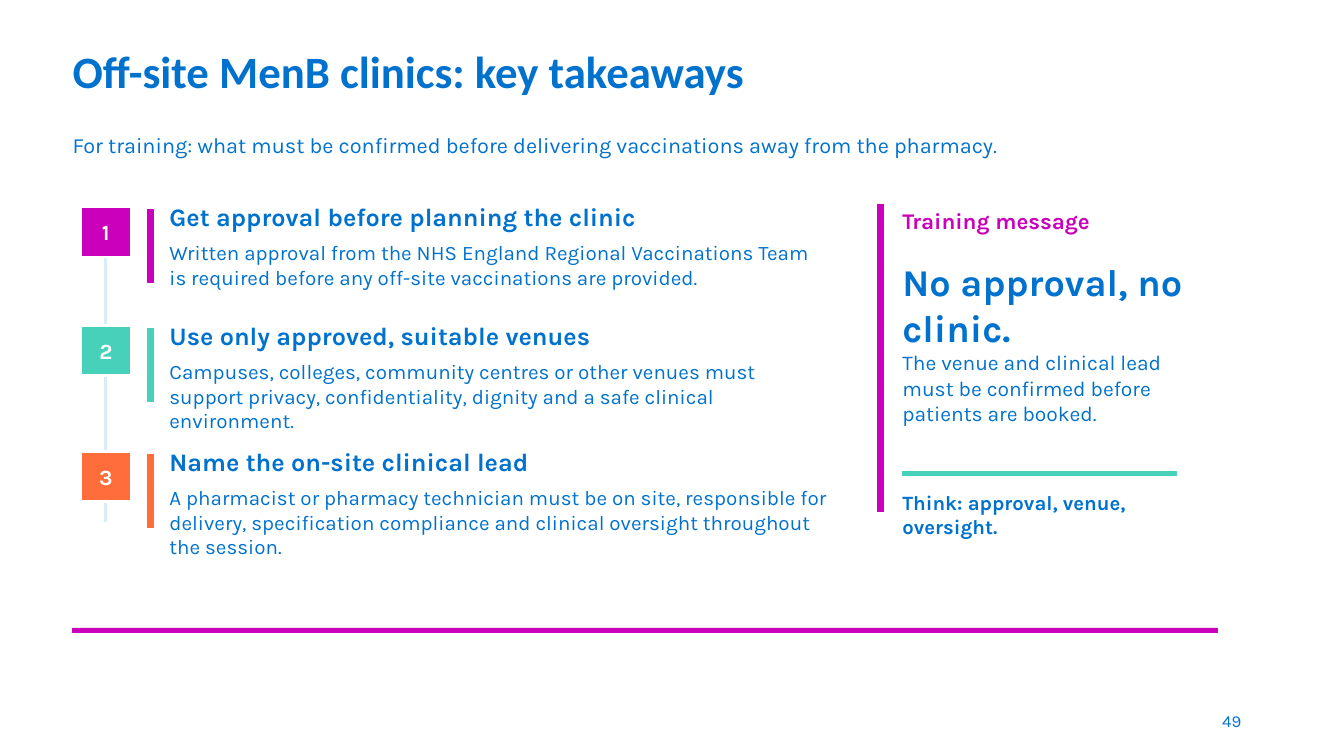
"""Build the slide of key takeaways for off-site MenB clinics."""
from dataclasses import dataclass

import pptx
import pptx.dml.color
import pptx.enum.shapes
import pptx.enum.text
import pptx.oxml
import pptx.oxml.ns
import pptx.shapes.autoshape
import pptx.slide
import pptx.util
from pptx.dml.color import RGBColor
from pptx.util import Inches

BLUE = RGBColor(0x00, 0x72, 0xCE)
MAGENTA = RGBColor(0xCB, 0x00, 0xBA)
TEAL = RGBColor(0x48, 0xD1, 0xBA)
ORANGE = RGBColor(0xFF, 0x6D, 0x3A)
PALE_BLUE = RGBColor(0xD9, 0xEC, 0xFA)
WHITE = RGBColor(0xFF, 0xFF, 0xFF)

ALIGN = pptx.enum.text.PP_ALIGN
ANCHOR = pptx.enum.text.MSO_ANCHOR
FIT = pptx.enum.text.MSO_AUTO_SIZE.SHAPE_TO_FIT_TEXT


@dataclass(frozen=True)
class Box:
    left: float
    top: float
    width: float
    height: float

    def lengths(self) -> tuple[int, ...]:
        return tuple(Inches(n) for n in (self.left, self.top, self.width, self.height))


@dataclass(frozen=True)
class Line:
    text: str
    size: float
    color: RGBColor = BLUE
    bold: bool = False
    font: str = "Karla"


@dataclass(frozen=True)
class Takeaway:
    top: float
    color: RGBColor
    heading: str
    detail: str


@dataclass(frozen=True)
class Note:
    box: Box
    lines: tuple[Line, ...]


TAKEAWAYS = (
    Takeaway(2.0, MAGENTA, "Get approval before planning the clinic",
             "Written approval from the NHS England Regional Vaccinations Team "
             "is required before any off-site vaccinations are provided."),
    Takeaway(3.18, TEAL, "Use only approved, suitable venues",
             "Campuses, colleges, community centres or other venues must support "
             "privacy, confidentiality, dignity and a safe clinical environment."),
    Takeaway(4.43, ORANGE, "Name the on-site clinical lead",
             "A pharmacist or pharmacy technician must be on site, responsible for "
             "delivery, specification compliance and clinical oversight throughout "
             "the session."),
)

NOTES = (
    Note(Box(0.72, 1.31, 10.9, 0.42),
         (Line("For training: what must be confirmed before delivering "
               "vaccinations away from the pharmacy.", 15.5),)),
    Note(Box(8.95, 2.05, 2.65, 0.32), (Line("Training message", 16, MAGENTA, True),)),
    Note(Box(8.95, 2.57, 2.85, 1.65),
         (Line("No approval, no clinic.", 27, bold=True),
          Line("The venue and clinical lead must be confirmed before "
               "patients are booked.", 15))),
    Note(Box(8.95, 4.86, 2.72, 0.42),
         (Line("Think: approval, venue, oversight.", 14.5, bold=True),)),
)

RULES = (
    (Box(8.7, 2.03, 0.06, 3.04), MAGENTA),
    (Box(8.95, 4.68, 2.72, 0.04), TEAL),
    (Box(0.72, 6.23, 11.35, 0.04), MAGENTA),
)


def write_lines(frame: pptx.text.text.TextFrame, lines: tuple[Line, ...],
                align: ALIGN = ALIGN.LEFT, inset: bool = False) -> None:
    frame.word_wrap = True
    if not inset:
        frame.margin_left = frame.margin_right = Inches(0)
        frame.margin_top = frame.margin_bottom = Inches(0)
    for index, line in enumerate(lines):
        paragraph = frame.add_paragraph() if index else frame.paragraphs[0]
        paragraph.text = line.text
        paragraph.alignment = align
        paragraph.font.name = line.font
        paragraph.font.size = pptx.util.Pt(line.size)
        paragraph.font.bold = line.bold
        paragraph.font.color.rgb = line.color


def add_text(slide: pptx.slide.Slide, box: Box, *lines: Line) -> None:
    frame = slide.shapes.add_textbox(*box.lengths()).text_frame
    write_lines(frame, lines)
    frame.auto_size = FIT


def add_rectangle(slide: pptx.slide.Slide, box: Box, fill: RGBColor, outline: RGBColor,
                  weight: float = 0.5) -> pptx.shapes.autoshape.Shape:
    shape = slide.shapes.add_shape(
        pptx.enum.shapes.MSO_SHAPE.RECTANGLE, *box.lengths())
    shape.shadow.inherit = False
    shape.fill.solid()
    shape.fill.fore_color.rgb = fill
    shape.line.color.rgb = outline
    shape.line.width = pptx.util.Pt(weight)
    return shape


def add_title(slide: pptx.slide.Slide) -> None:
    frame = slide.shapes.add_textbox(*Box(0.72, 0.36, 11.6, 0.62).lengths()).text_frame
    write_lines(frame, (Line("Off-site MenB clinics: key takeaways", 32, BLUE, True,
                             "Calibri"),))
    frame.vertical_anchor = ANCHOR.MIDDLE
    frame.paragraphs[0].line_spacing = 1.1


def add_page_number(slide: pptx.slide.Slide) -> None:
    frame = slide.shapes.add_textbox(*Box(11.67, 6.95, 0.74, 0.4).lengths()).text_frame
    write_lines(frame, (Line("49", 12),), ALIGN.RIGHT, inset=True)
    frame.vertical_anchor = ANCHOR.MIDDLE


def add_timeline(slide: pptx.slide.Slide) -> None:
    connector = slide.shapes.add_connector(
        pptx.enum.shapes.MSO_CONNECTOR.STRAIGHT,
        Inches(1.05), Inches(2.25), Inches(1.05), Inches(5.18))
    connector.line.color.rgb = PALE_BLUE
    connector.line.width = pptx.util.Pt(2)
    properties = connector.element.find(pptx.oxml.ns.qn("p:spPr"))
    properties.append(pptx.oxml.parse_xml(
        f"<a:effectLst {pptx.oxml.ns.nsdecls('a')}/>"))


def add_takeaway(slide: pptx.slide.Slide, number: int, takeaway: Takeaway) -> None:
    top, color = takeaway.top, takeaway.color
    badge = add_rectangle(slide, Box(0.8, top + 0.05, 0.5, 0.5), color, WHITE, 2)
    write_lines(badge.text_frame, (Line(str(number), 15.5, WHITE, True),), ALIGN.CENTER)
    badge.text_frame.vertical_anchor = ANCHOR.MIDDLE
    add_rectangle(slide, Box(1.46, top + 0.08, 0.06, 0.72), color, color)
    add_text(slide, Box(1.68, top, 6.38, 0.3), Line(takeaway.heading, 18, bold=True))
    add_text(slide, Box(1.68, top + 0.38, 6.55, 0.58), Line(takeaway.detail, 14.7))


def main() -> None:
    presentation = pptx.Presentation()
    presentation.slide_width = Inches(13.33)
    presentation.slide_height = Inches(7.5)
    slide = presentation.slides.add_slide(presentation.slide_layouts[6])
    add_title(slide)
    add_page_number(slide)
    add_timeline(slide)
    for number, takeaway in enumerate(TAKEAWAYS, start=1):
        add_takeaway(slide, number, takeaway)
    for box, color in RULES:
        add_rectangle(slide, box, color, color)
    for note in NOTES:
        add_text(slide, note.box, *note.lines)
    presentation.save("out.pptx")


if __name__ == "__main__":
    main()
